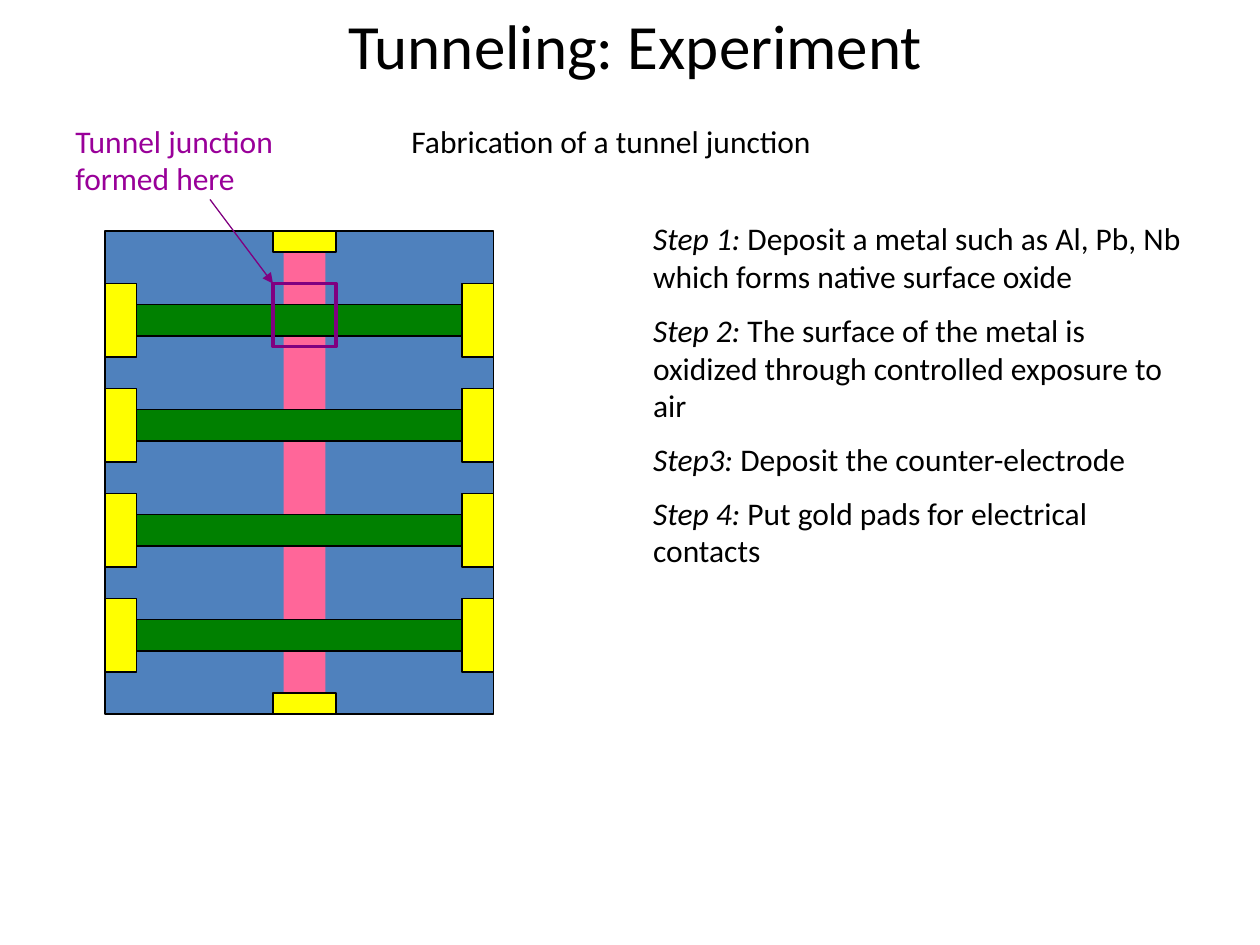
from lxml import etree
from pptx import Presentation
from pptx.dml.color import RGBColor
from pptx.enum.shapes import MSO_CONNECTOR, MSO_SHAPE
from pptx.enum.text import MSO_ANCHOR, MSO_AUTO_SIZE, PP_ALIGN
from pptx.oxml.ns import qn
from pptx.util import Cm, Pt

RECTANGLE = MSO_SHAPE.RECTANGLE
STRAIGHT = MSO_CONNECTOR.STRAIGHT
TOP, MIDDLE = MSO_ANCHOR.TOP, MSO_ANCHOR.MIDDLE
LEFT, CENTER = PP_ALIGN.LEFT, PP_ALIGN.CENTER
NO_AUTOSIZE = MSO_AUTO_SIZE.NONE

COLORS = {
    "text": "000000",
    "label": "990099",
    "outline": "000000",
    "substrate": "4F81BD",
    "base_metal": "FF6699",
    "electrode": "008000",
    "gold": "FFFF00",
    "junction": "800080",
}
GRID_CM = 2.54 / 12
ROWS = 4
ROW_PITCH = 10
STEPS = [
    ("Step 1:", " Deposit a metal such as Al, Pb, Nb which forms native surface oxide"),
    ("Step 2: ", "The surface of the metal is oxidized through controlled exposure to air"),
    ("Step3: ", "Deposit the counter-electrode"),
    ("Step 4: ", "Put gold pads for electrical contacts"),
]


def grid(*units):
    return [Cm(unit * GRID_CM) for unit in units]


def color(name):
    return RGBColor.from_string(COLORS[name])


def set_values(target, values):
    for name, value in values.items():
        setattr(target, name, value)


def place(box, area, anchor=TOP):
    left, top, width, height = grid(*area)
    set_values(box, {"left": left, "top": top, "width": width, "height": height})
    set_values(box.text_frame, {
        "word_wrap": True, "auto_size": NO_AUTOSIZE, "vertical_anchor": anchor,
    })


def add_span(para, text, size=18, color_name="text", italic=False):
    span = para.add_run()
    span.text = text
    set_values(span.font, {
        "name": "Calibri", "size": Pt(size), "italic": italic,
    })
    span.font.color.rgb = color(color_name)


def add_title(page, text):
    box = page.shapes.title
    place(box, (6, 0, 109, 8.4), MIDDLE)
    para = box.text_frame.paragraphs[0]
    para.alignment = CENTER
    add_span(para, text, size=36)


def add_label(page, text, area, color_name="text"):
    box = page.shapes.add_textbox(*grid(*area))
    place(box, area)
    add_span(box.text_frame.paragraphs[0], text, color_name=color_name)


def add_steps(page):
    box = page.placeholders[1]
    place(box, (61, 20.3, 54, 35.8))
    frame = box.text_frame
    for index, (heading, detail) in enumerate(STEPS):
        para = frame.add_paragraph() if index else frame.paragraphs[0]
        set_values(para, {
            "alignment": LEFT, "space_before": Pt(9 if index else 0),
        })
        properties = para._p.get_or_add_pPr()
        properties.set("marL", "0")
        properties.set("indent", "0")
        etree.SubElement(properties, qn("a:buNone"))
        add_span(para, heading, italic=True)
        add_span(para, detail)


def add_block(shapes, area, fill=None, line=None, weight=0.75):
    block = shapes.add_shape(RECTANGLE, *grid(*area))
    block.shadow.inherit = False
    if fill:
        block.fill.solid()
        block.fill.fore_color.rgb = color(fill)
    else:
        block.fill.background()
    if line:
        block.line.color.rgb = color(line)
        block.line.width = Pt(weight)
    else:
        block.line.fill.background()


def add_arrow(page, start, end, color_name):
    arrow = page.shapes.add_connector(STRAIGHT, *grid(*start, *end))
    arrow.line.color.rgb = color(color_name)
    arrow.line.width = Pt(0.75)
    etree.SubElement(arrow.line._get_or_add_ln(), qn("a:tailEnd"), type="triangle")
    etree.SubElement(arrow._element.spPr, qn("a:effectLst"))


def add_device(page):
    shapes = page.shapes
    add_block(shapes, (10, 22, 37, 46), "substrate", "outline")
    add_block(shapes, (27, 22, 4, 46), "base_metal")
    for row in range(ROWS):
        add_block(shapes, (11, 29 + row * ROW_PITCH, 35, 3), "electrode", "outline")
    add_block(shapes, (26, 27, 6, 6), line="junction", weight=2)
    add_arrow(page, (20, 19), (26, 27), "junction")


def add_gold_pads(page):
    pads = page.shapes.add_group_shape().shapes
    for row in range(ROWS):
        for left in (44, 10):
            add_block(pads, (left, 27 + row * ROW_PITCH, 3, 7), "gold", "outline")
    for top in (22, 66):
        add_block(pads, (26, top, 6, 2), "gold", "outline")


def main():
    deck = Presentation()
    set_values(deck, {"slide_width": Cm(25.4), "slide_height": Cm(19.05)})
    page = deck.slides.add_slide(deck.slide_layouts[1])
    add_title(page, "Tunneling: Experiment")
    add_label(page, "Fabrication of a tunnel junction", (38, 11, 44, 4.8))
    add_steps(page)
    add_device(page)
    add_label(page, "Tunnel junction formed here", (6, 11, 24, 8.4), "label")
    add_gold_pads(page)
    deck.save("out.pptx")


if __name__ == "__main__":
    main()
